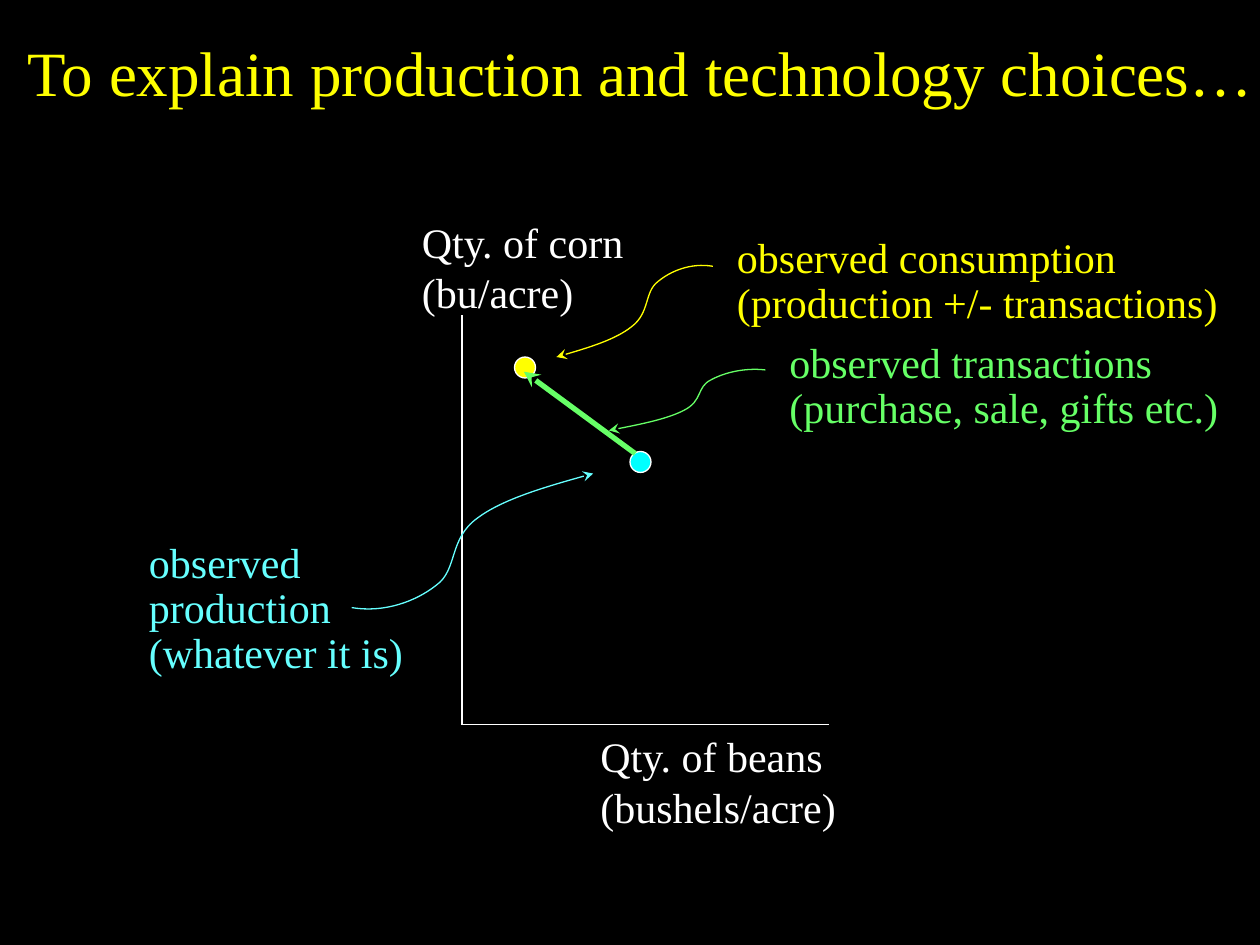
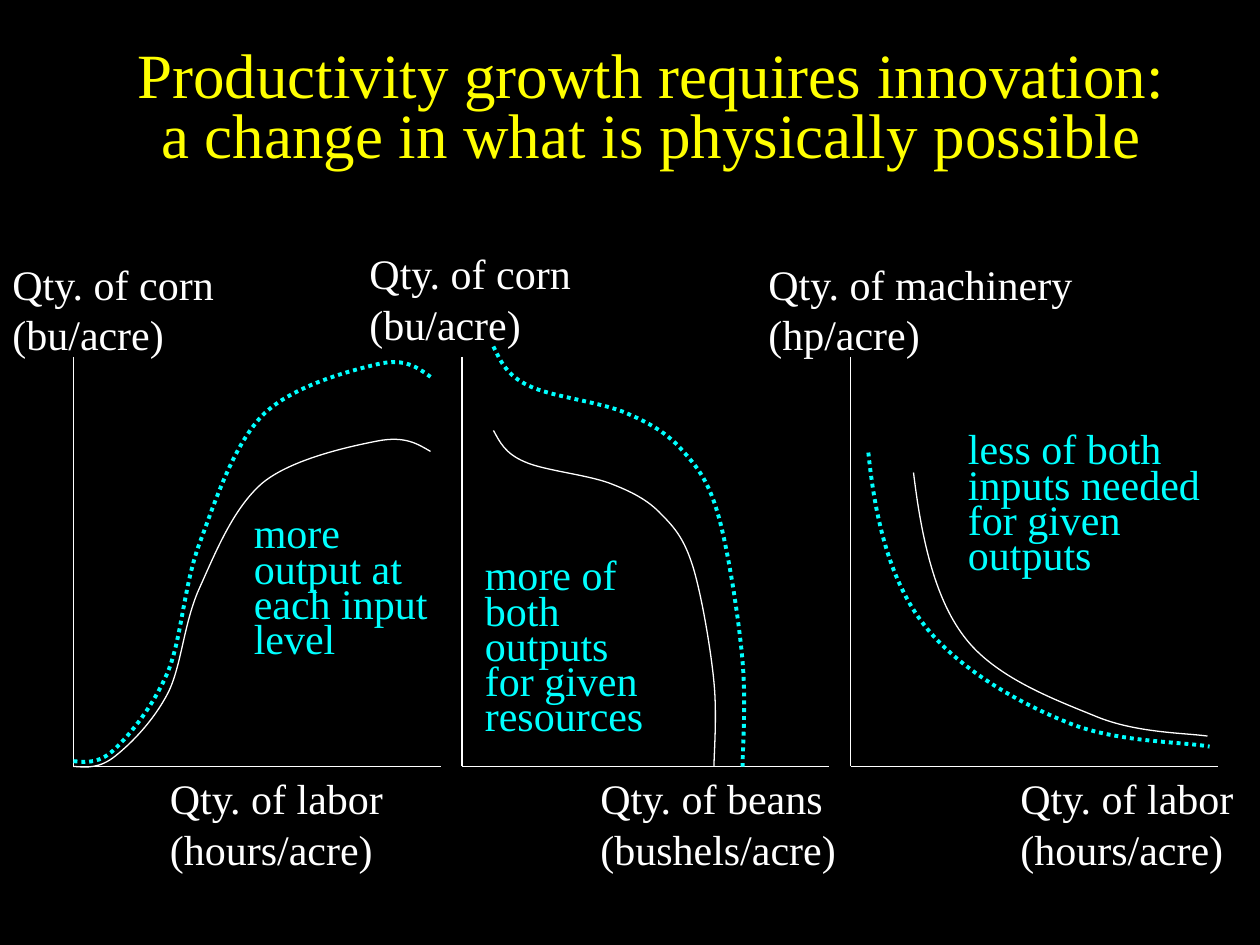
from dataclasses import dataclass

from lxml.etree import SubElement
from pptx import Presentation
from pptx.dml.color import RGBColor
from pptx.enum.dml import MSO_LINE
from pptx.enum.shapes import MSO_CONNECTOR, MSO_SHAPE
from pptx.enum.text import MSO_ANCHOR, MSO_AUTO_SIZE, PP_ALIGN
from pptx.oxml.ns import qn
from pptx.util import Inches, Pt

BLACK = RGBColor(0x00, 0x00, 0x00)
WHITE = RGBColor(0xFF, 0xFF, 0xFF)
YELLOW = RGBColor(0xFF, 0xFF, 0x00)
CYAN = RGBColor(0x00, 0xFF, 0xFF)
PALE_CYAN = RGBColor(0x66, 0xFF, 0xFF)
GREEN = RGBColor(0x66, 0xFF, 0x66)

FONT = "Times New Roman"
TITLE_SIZE, TEXT_SIZE = Pt(36), Pt(24)
THIN, DOTTED, THICK = Pt(0.75), Pt(2.25), Pt(3)

# The slide is a grid of 120 columns by 90 rows.
CELL = Inches(10) / 120
AXIS_WIDTH, AXIS_HEIGHT = 35, 39
LABEL_HEIGHT = 10.8

CORN = ("Qty. of corn", "(bu/acre)"), 21.84
BEANS = ("Qty. of beans", "(bushels/acre)"), 24.84
LABOR = ("Qty. of labor", "(hours/acre)"), 24
MACHINERY = ("Qty. of machinery", "(hp/acre)"), 31.56

# Each curve: a start point, then three Bezier points per segment.
# Callouts are shares of their box; the others are columns right of and rows
# above the origin of the graph.
CALLOUT = [(0, .04), (.14, 0), (.27, .09), (.35, .2), (.44, .31), (.4, .53),
           (.52, .68), (.62, .81), (.81, .91), (1, 1)]
OUTPUT_CURVE = [
    (0, 0), (1.3, -.1), (2.5, -.2), (4, 1), (5.5, 2.2), (7.6, 4.3), (9, 7),
    (10.3, 9.6), (10.5, 13.7), (12, 17), (13.5, 20.3), (15.2, 24.6), (18, 27),
    (20.8, 29.3), (26.4, 30.5), (29, 31), (31.6, 31.5), (32.8, 30.7), (34, 30)]
POSSIBILITY_CURVE = [
    (3, 32), (3.6, 30.9), (4.1, 29.8), (6, 29), (7.8, 28.2), (11.8, 27.8),
    (14, 27), (16.1, 26.2), (17.7, 25.4), (19, 24), (20.3, 22.7), (21.2, 21.6),
    (22, 19), (22.8, 16.4), (23.7, 11.2), (24, 8), (24.3, 4.8), (24, 1.3),
    (24, 0)]
ISOQUANT = [
    (6, 28), (6.7, 22.2), (7.9, 16.2), (10.8, 12.4), (13.7, 8.5), (19.4, 6.4),
    (23.3, 4.8), (27.1, 3.2), (31.8, 3.2), (34, 2.9)]
LOWER_ISOQUANT = [
    (1.7, 29.9), (2.3, 24), (3.6, 18.1), (6.7, 13.9), (9.8, 9.6), (15.7, 6.2),
    (20.4, 4.3), (25, 2.3), (31.3, 2.4), (34.2, 1.9)]


@dataclass
class Graph:
    left: float
    top: float

    @property
    def floor(self):
        return self.top + AXIS_HEIGHT

    def place(self, points):
        return [(self.left + x, self.floor - y) for x, y in points]


def cells(*counts):
    return [round(count * CELL) for count in counts]


def stretched(points, x_scale, y_scale, x_shift=0, y_shift=0):
    return [(x * x_scale + x_shift, y * y_scale + y_shift) for x, y in points]


def add_run(paragraph, words, size, color):
    run = paragraph.add_run()
    run.text = words
    run.font.name = FONT
    run.font.size = size
    run.font.color.rgb = color


def style_line(shape, color, width, arrow=False):
    shape.line.color.rgb = color
    shape.line.width = width
    if arrow:
        SubElement(shape.line._get_or_add_ln(), qn("a:tailEnd"), type="stealth")


def add_title(slide, box, *lines):
    title = slide.shapes.title
    title.left, title.top, title.width, title.height = cells(*box)
    frame = title.text_frame
    frame.word_wrap = True
    frame.auto_size = MSO_AUTO_SIZE.NONE
    frame.vertical_anchor = MSO_ANCHOR.MIDDLE
    paragraph = frame.paragraphs[0]
    paragraph.alignment = PP_ALIGN.CENTER
    paragraph.line_spacing = 0.8
    for number, line in enumerate(lines):
        if number:
            paragraph.add_line_break()
        add_run(paragraph, line, TITLE_SIZE, YELLOW)


def add_text(slide, box, lines, color, spacing=None, wrap=True):
    frame = slide.shapes.add_textbox(*cells(*box)).text_frame
    frame.word_wrap = wrap
    frame.auto_size = MSO_AUTO_SIZE.SHAPE_TO_FIT_TEXT
    for number, line in enumerate(lines):
        paragraph = frame.add_paragraph() if number else frame.paragraphs[0]
        if spacing:
            paragraph.line_spacing = spacing
        add_run(paragraph, line, TEXT_SIZE, color)


def add_straight(slide, start, end, color, width, arrow=False):
    line = slide.shapes.add_connector(MSO_CONNECTOR.STRAIGHT, *cells(*start, *end))
    style_line(line, color, width, arrow)
    SubElement(line._element.spPr, qn("a:effectLst"))


def add_curve(slide, points, color, width=THIN, arrow=False, dash=None):
    """Draw an outline, then turn each three line segments into one Bezier."""
    start, *rest = [cells(*point) for point in points]
    builder = slide.shapes.build_freeform(*start)
    builder.add_line_segments(rest, close=False)
    curve = builder.convert_to_shape()
    outline = next(curve._element.iter(qn("a:path")))
    segments = outline.findall(qn("a:lnTo"))
    for first in range(0, len(segments), 3):
        bezier = SubElement(outline, qn("a:cubicBezTo"))
        for segment in segments[first:first + 3]:
            bezier.append(segment[0])
            outline.remove(segment)
    curve.shadow.inherit = False
    curve.fill.background()
    if dash:
        curve.line.dash_style = dash
    style_line(curve, color, width, arrow)


def add_callout(slide, start, width, height, color):
    left, top = start
    add_curve(slide, stretched(CALLOUT, width, height, left, top), color, arrow=True)


def add_dot(slide, left, top, color):
    dot = slide.shapes.add_shape(MSO_SHAPE.OVAL, *cells(left, top, 2, 2))
    dot.shadow.inherit = False
    dot.fill.solid()
    dot.fill.fore_color.rgb = color
    style_line(dot, WHITE, THIN)


def add_axes(slide, graph, y_label, y_offset, x_label, x_offset):
    """Draw both axes; offsets place the labels from the top and the origin."""
    origin = graph.left, graph.floor
    add_straight(slide, (graph.left, graph.top), origin, WHITE, THIN)
    add_straight(slide, origin, (graph.left + AXIS_WIDTH, graph.floor), WHITE, THIN)
    for (lines, width), left, top in (
            (y_label, graph.left + y_offset[0], graph.top + y_offset[1]),
            (x_label, graph.left + x_offset, graph.floor)):
        add_text(slide, (left, top, width, LABEL_HEIGHT), lines, WHITE, wrap=False)


def add_innovation(slide, graph, before, after, note, note_box):
    add_curve(slide, graph.place(before), WHITE)
    add_curve(slide, graph.place(after), CYAN, DOTTED, dash=MSO_LINE.ROUND_DOT)
    left, top, width, height = note_box
    add_text(slide, (graph.left + left, graph.top + top, width, height),
             [note], CYAN, spacing=0.7)


def build_choices(slide):
    add_title(slide, (1, 4, 120, 7), "To explain production and technology choices…")
    graph = Graph(44, 30)
    left, top = graph.left, graph.top
    add_axes(slide, graph, CORN, (-5, -10), BEANS, 12)
    add_dot(slide, left + 16, top + 13, CYAN)
    add_dot(slide, left + 5, top + 4, YELLOW)
    add_straight(slide, (left + 16.5, top + 13.2), (left + 5.9, top + 5.4),
                 GREEN, THICK, arrow=True)

    notes = [
        ((-31, 21, 28, 14.3), ("observed production", "(whatever it is)"), PALE_CYAN,
         (-10.5, 28.4), 23, -13.3),
        ((25, -8, 51, 10), ("observed consumption", "(production +/- transactions)"),
         YELLOW, (23.9, -5), -14.9, 9),
        ((30, 2, 51, 10), ("observed transactions", "(purchase, sale, gifts etc.)"),
         GREEN, (28.9, 5), -14.9, 6)]
    for (x, y, width, height), lines, color, start, reach, drop in notes:
        add_text(slide, (left + x, top + y, width, height), lines, color, spacing=0.9)
        add_callout(slide, (left + start[0], top + start[1]), reach, drop, color)


def build_innovation(slide):
    add_title(slide, (4, 6, 116, 9), "Productivity growth requires innovation:",
              "a change in what is physically possible")
    response, possibility, inputs = [Graph(7 + 37 * n, 34) for n in range(3)]
    add_axes(slide, response, CORN, (-7, -10), LABOR, 8)
    add_axes(slide, possibility, CORN, (-10, -11), BEANS, 12)
    add_axes(slide, inputs, MACHINERY, (-9, -10), LABOR, 15)
    add_innovation(slide, response, OUTPUT_CURVE,
                   stretched(OUTPUT_CURVE, 1, 1.22, y_shift=0.5),
                   "more output at each input level", (16, 15, 19, 14.6))
    add_innovation(slide, possibility, POSSIBILITY_CURVE,
                   stretched(POSSIBILITY_CURVE, 1.13, 1.25, x_shift=-0.4),
                   "more of both outputs for given resources", (1, 19, 19, 18))
    add_innovation(slide, inputs, ISOQUANT, LOWER_ISOQUANT,
                   "less of both inputs needed for given outputs", (10, 7, 26, 14.6))


def main():
    deck = Presentation()
    deck.slide_width, deck.slide_height = cells(120, 90)
    backdrop = deck.slide_master.background.fill
    backdrop.solid()
    backdrop.fore_color.rgb = BLACK
    title_only = deck.slide_layouts[5]
    for build in (build_choices, build_innovation):
        build(deck.slides.add_slide(title_only))
    deck.save("out.pptx")


if __name__ == "__main__":
    main()
